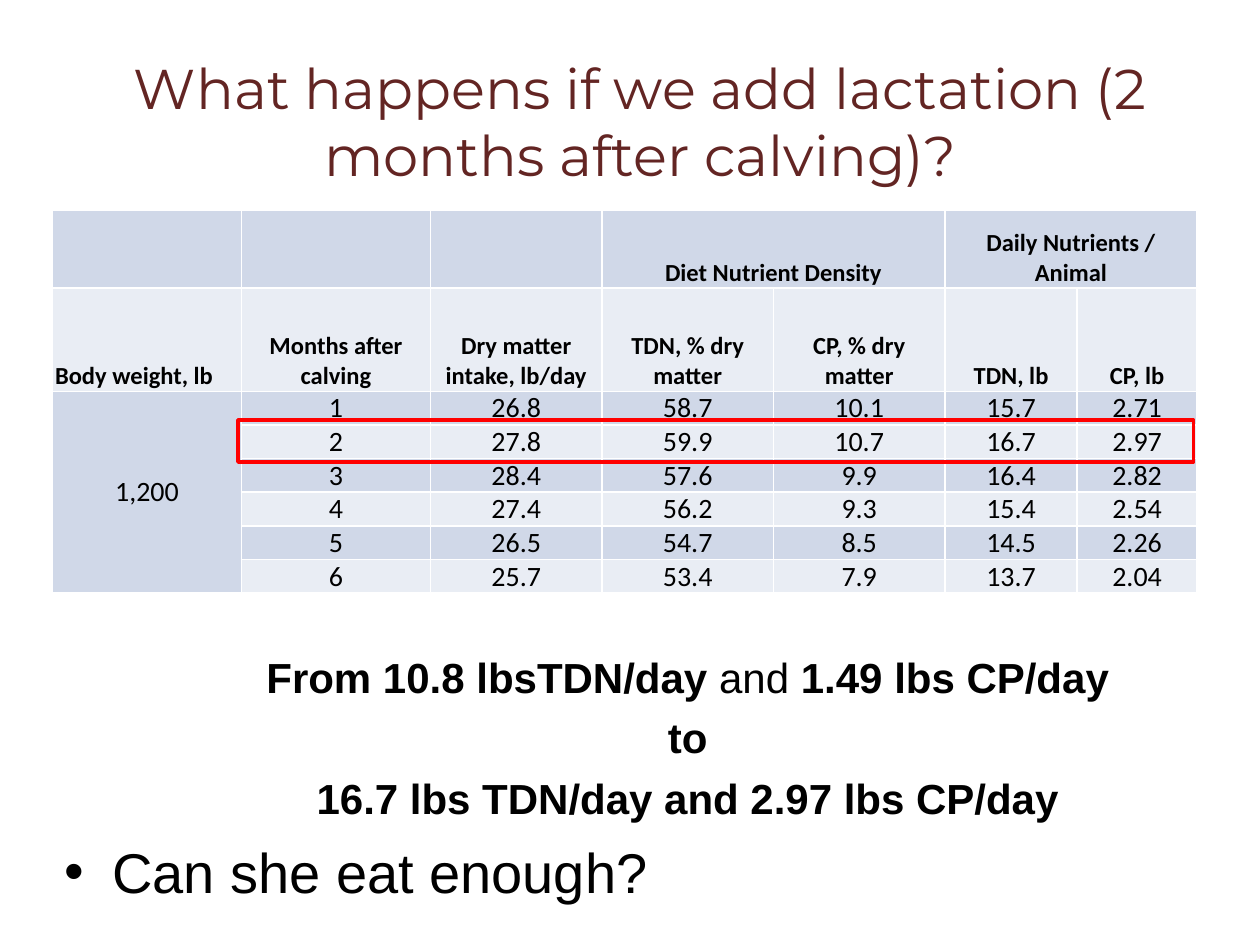
from typing import NamedTuple

from lxml.etree import SubElement
from pptx import Presentation
from pptx.dml.color import RGBColor
from pptx.enum.shapes import MSO_SHAPE
from pptx.enum.text import MSO_ANCHOR, PP_ALIGN
from pptx.oxml.ns import qn
from pptx.util import Pt

BLACK = RGBColor(0x00, 0x00, 0x00)
WHITE = RGBColor(0xFF, 0xFF, 0xFF)
MAROON = RGBColor(0x63, 0x25, 0x23)
RED = RGBColor(0xFF, 0x00, 0x00)
BANDS = (RGBColor(0xD0, 0xD8, 0xE8), RGBColor(0xE9, 0xED, 0xF4))

COLUMN_WIDTHS = (108, 108, 98, 98, 98, 75.6, 68.4)
HEADER_HEIGHTS = (44.6, 59)
MONTH_HEIGHT = 16.5


class Message(NamedTuple):
    runs: tuple[tuple[str, bool], ...]
    size: float = 24
    space_before: float = 6
    bullet: bool = False


class Month(NamedTuple):
    number: str
    intake: str
    tdn_share: str
    cp_share: str
    tdn: str
    cp: str


GROUPS = ("", "", "", "Diet Nutrient Density", "", "Daily Nutrients / Animal", "")
HEADINGS = ("Body weight, lb", "Months after calving", "Dry matter intake, lb/day",
            "TDN, % dry matter", "CP, % dry matter", "TDN, lb", "CP, lb")
MONTHS = (
    Month("1", "26.8", "58.7", "10.1", "15.7", "2.71"),
    Month("2", "27.8", "59.9", "10.7", "16.7", "2.97"),
    Month("3", "28.4", "57.6", "9.9", "16.4", "2.82"),
    Month("4", "27.4", "56.2", "9.3", "15.4", "2.54"),
    Month("5", "26.5", "54.7", "8.5", "14.5", "2.26"),
    Month("6", "25.7", "53.4", "7.9", "13.7", "2.04"),
)
MESSAGES = (
    Message((("From 10.8 lbsTDN/day", True), (" and ", False), ("1.49 lbs CP/day", True)),
            space_before=0),
    Message((("to", True),)),
    Message((("16.7 lbs TDN/day and 2.97 lbs CP/day", True),)),
    Message((("Can she eat enough?", False),), size=32, space_before=8, bullet=True),
)


def set_font(font, name: str, size: float, color: RGBColor) -> None:
    font.name = name
    font.size = Pt(size)
    font.color.rgb = color


def add_borders(cell) -> None:
    """Draw white 1 pt edges; they precede the fill in the cell's XML."""
    properties = cell._tc.get_or_add_tcPr()
    for index, side in enumerate(("a:lnL", "a:lnR", "a:lnT", "a:lnB")):
        edge = SubElement(properties, qn(side), w=str(Pt(1)))
        fill = SubElement(edge, qn("a:solidFill"))
        SubElement(fill, qn("a:srgbClr"), val=str(WHITE))
        properties.insert(index, edge)


def fill_cell(cell, text: str, row: int, column: int) -> None:
    is_header = row < len(HEADER_HEIGHTS)
    cell.margin_left = cell.margin_right = Pt(1.5)
    cell.margin_top = cell.margin_bottom = Pt(0)
    if is_header:
        cell.vertical_anchor = MSO_ANCHOR.BOTTOM
    elif column == 0:
        cell.vertical_anchor = MSO_ANCHOR.MIDDLE
    cell.fill.solid()
    cell.fill.fore_color.rgb = BANDS[row % 2]
    add_borders(cell)
    paragraph = cell.text_frame.paragraphs[0]
    paragraph.text = text
    paragraph.alignment = PP_ALIGN.LEFT if is_header and column == 0 else PP_ALIGN.CENTER
    set_font(paragraph.font, "Calibri", 14 if is_header else 16, BLACK)
    paragraph.font.bold = is_header


def add_title(slide) -> None:
    frame = slide.shapes.add_textbox(Pt(42), Pt(24), Pt(648), Pt(90)).text_frame
    frame.word_wrap = True
    frame.vertical_anchor = MSO_ANCHOR.MIDDLE
    paragraph = frame.paragraphs[0]
    paragraph.text = "What happens if we add lactation (2 months after calving)?"
    paragraph.alignment = PP_ALIGN.CENTER
    set_font(paragraph.font, "Montserrat", 32, MAROON)


def add_messages(slide) -> None:
    frame = slide.shapes.add_textbox(Pt(30), Pt(366), Pt(654), Pt(144)).text_frame
    frame.word_wrap = True
    frame.margin_top = Pt(6)
    for index, message in enumerate(MESSAGES):
        paragraph = frame.add_paragraph() if index else frame.paragraphs[0]
        properties = paragraph._p.get_or_add_pPr()
        if message.bullet:
            properties.set("marL", str(Pt(27)))
            properties.set("indent", str(Pt(-27)))
            SubElement(properties, qn("a:buFont"), typeface="Arial")
            SubElement(properties, qn("a:buChar"), char="•")
        else:
            properties.set("marL", str(Pt(72)))
            properties.set("indent", "0")
            paragraph.alignment = PP_ALIGN.CENTER
        paragraph.space_before = Pt(message.space_before)
        set_font(paragraph.font, "Arial", message.size, BLACK)
        for text, bold in message.runs:
            run = paragraph.add_run()
            run.text = text
            run.font.bold = bold


def add_requirements(slide) -> None:
    rows = [GROUPS, HEADINGS]
    rows += [("" if index else "1,200", *month) for index, month in enumerate(MONTHS)]
    heights = HEADER_HEIGHTS + (MONTH_HEIGHT,) * len(MONTHS)
    table = slide.shapes.add_table(len(rows), len(COLUMN_WIDTHS), Pt(30), Pt(120),
                                   Pt(sum(COLUMN_WIDTHS)), Pt(sum(heights))).table
    table.first_row = table.horz_banding = False
    for column, width in zip(table.columns, COLUMN_WIDTHS):
        column.width = Pt(width)
    for row, height in zip(table.rows, heights):
        row.height = Pt(height)
    for row, texts in enumerate(rows):
        for column, text in enumerate(texts):
            fill_cell(table.cell(row, column), text, row, column)
    # Group headings span two columns, the body weight spans all months
    for column in (3, 5):
        table.cell(0, column).merge(table.cell(0, column + 1))
    table.cell(2, 0).merge(table.cell(len(rows) - 1, 0))


def add_highlight(slide) -> None:
    frame = slide.shapes.add_shape(MSO_SHAPE.RECTANGLE, Pt(136), Pt(240), Pt(546), Pt(24))
    frame.shadow.inherit = False
    frame.fill.background()
    frame.line.color.rgb = RED
    frame.line.width = Pt(2)


def main() -> None:
    presentation = Presentation()
    presentation.slide_width, presentation.slide_height = Pt(720), Pt(540)
    slide = presentation.slides.add_slide(presentation.slide_layouts[6])
    add_title(slide)
    add_messages(slide)
    add_requirements(slide)
    add_highlight(slide)
    presentation.save("out.pptx")


if __name__ == "__main__":
    main()
